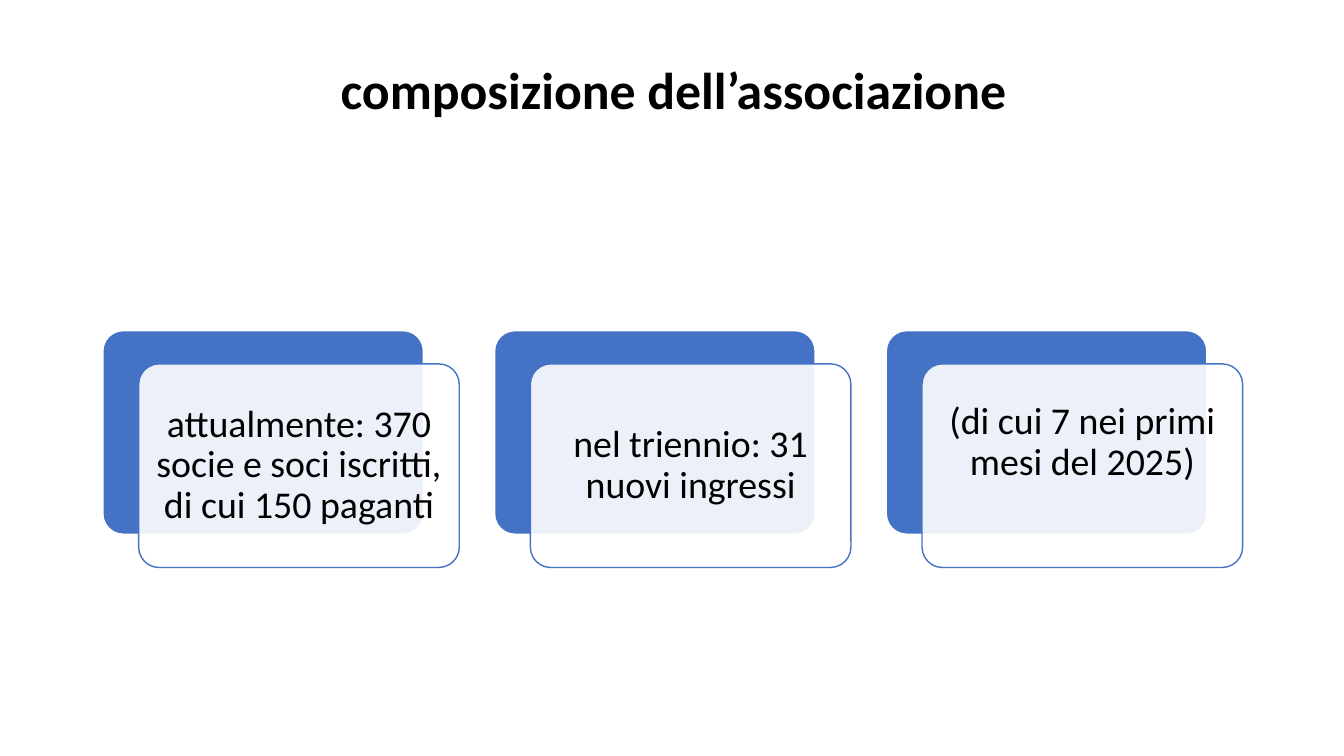
from lxml import etree
from pptx import Presentation
from pptx import util as u
from pptx.dml.color import RGBColor
from pptx.enum import shapes, text
from pptx.oxml.ns import qn

COLORS = {"blue": "4472C4", "white": "FFFFFF", "black": "000000"}
FONT = "Calibri"
CARD_LEFT, CARD_TOP, CARD_STEP = 1.02, 3.28, 3.885
CARD_WIDTH, CARD_HEIGHT = 3.18, 2.02
FRONT_SHIFT_X, FRONT_SHIFT_Y = 0.355, 0.33

# Wording and extra space below it, in inches
CARDS = [
    ("attualmente: 370 socie e soci iscritti, di cui 150 paganti", 0),
    ("nel triennio: 31 nuovi ingressi", 0),
    ("(di cui 7 nei primi mesi del 2025)", 0.45),
]


def rgb(name):
    return RGBColor.from_string(COLORS[name])


def write(holder, wording, size, inset, space_below=0, bold=False):
    """Centre one paragraph, lifted by the space kept below it."""
    frame = holder.text_frame
    frame.word_wrap = True
    frame.vertical_anchor = text.MSO_ANCHOR.MIDDLE
    frame.margin_left = frame.margin_right = u.Inches(inset)
    frame.margin_top = u.Inches(inset)
    frame.margin_bottom = u.Inches(inset + space_below)
    frame.text = wording
    paragraph = frame.paragraphs[0]
    paragraph.alignment = text.PP_ALIGN.CENTER
    paragraph.line_spacing = 0.9
    font = paragraph.runs[0].font
    font.name, font.size, font.bold = FONT, u.Pt(size), bold
    font.color.rgb = rgb("black")


def add_title(slide, wording):
    title = slide.shapes.add_textbox(
        u.Inches(1.67), u.Inches(0.6), u.Inches(10.02), u.Inches(1.24))
    write(title, wording, 37, 0.05, space_below=0.6, bold=True)


def add_panel(slide, left, top, fill, line, opacity=100):
    panel = slide.shapes.add_shape(
        shapes.MSO_SHAPE.ROUNDED_RECTANGLE, u.Inches(left), u.Inches(top),
        u.Inches(CARD_WIDTH), u.Inches(CARD_HEIGHT))
    panel.adjustments[0] = 0.1
    panel.shadow.inherit = False
    panel.fill.solid()
    panel.fill.fore_color.rgb = rgb(fill)
    panel.line.color.rgb = rgb(line)
    panel.line.width = u.Pt(1)
    if opacity < 100:
        color = panel.fill._xPr.find(qn("a:solidFill"))[0]
        etree.SubElement(color, qn("a:alpha")).set("val", str(opacity * 1000))
    return panel


def add_card(slide, left, wording, space_below):
    add_panel(slide, left, CARD_TOP, "blue", "white")
    front = add_panel(slide, left + FRONT_SHIFT_X, CARD_TOP + FRONT_SHIFT_Y,
                      "white", "blue", opacity=90)
    write(front, wording, 27, 0.11, space_below)


def main():
    deck = Presentation()
    deck.slide_width, deck.slide_height = u.Inches(13.33), u.Inches(7.5)
    slide = deck.slides.add_slide(deck.slide_layouts[6])

    # Heading
    add_title(slide, "composizione dell’associazione")

    # Row of membership cards
    for index, (wording, space_below) in enumerate(CARDS):
        add_card(slide, CARD_LEFT + index * CARD_STEP, wording, space_below)

    deck.save("out.pptx")


if __name__ == "__main__":
    main()
